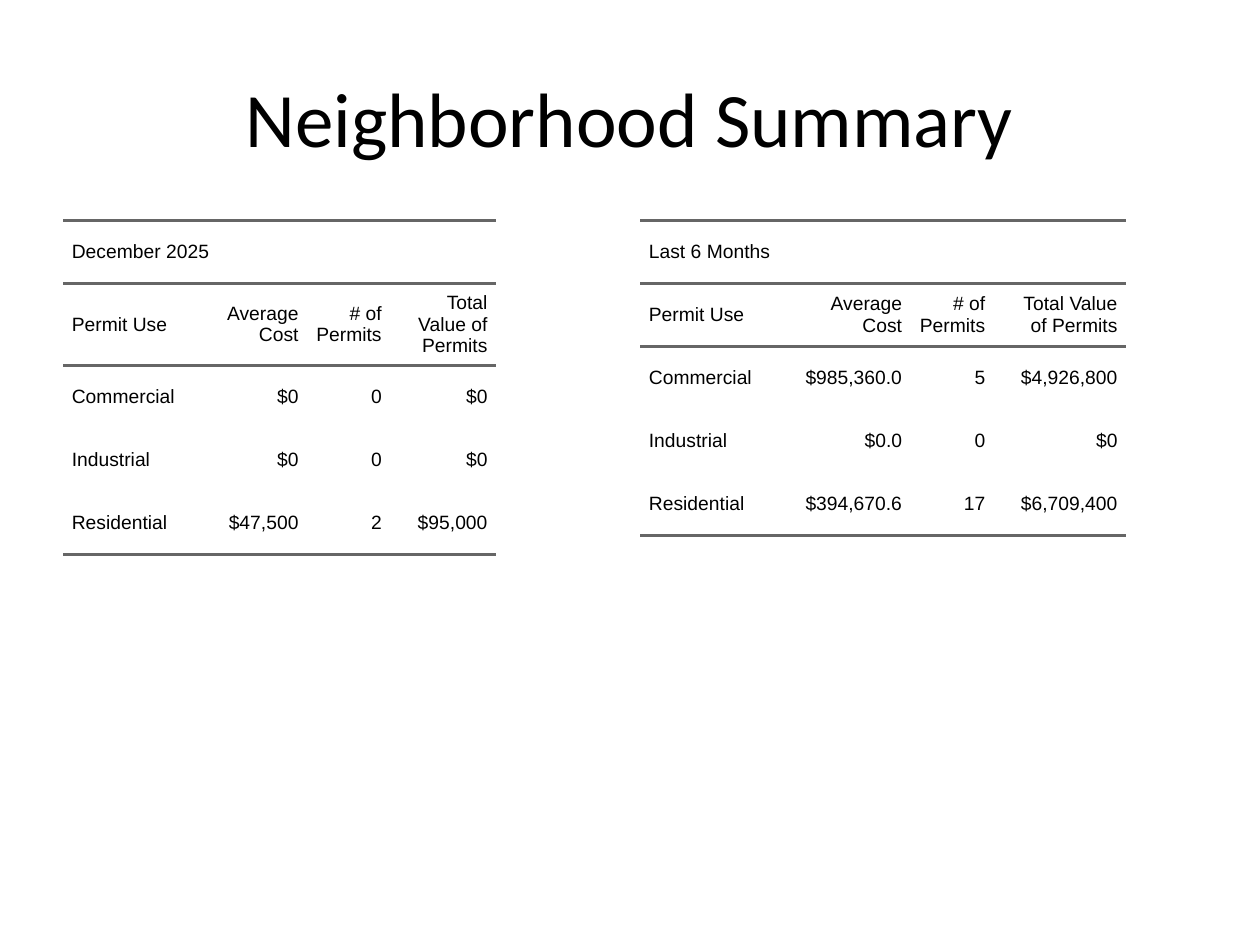
"""Build the neighborhood permit summary slide with two ruled tables."""

from dataclasses import dataclass

import lxml.etree
import pptx
import pptx.dml.color
import pptx.enum.text
import pptx.oxml.ns
import pptx.util

Inches = pptx.util.Inches
COLORS = {"text": "000000", "rule": "666666"}
HEADERS = ("Permit Use", "Average Cost", "# of Permits", "Total Value of Permits")
PERMIT_USES = ("Commercial", "Industrial", "Residential")
ROW_HEIGHT = 0.5
TABLE_TOP = 1.75
CELL_PADDING = 0.07
RULED_ROWS = {0: ("lnT", "lnB"), 1: ("lnT", "lnB"), 4: ("lnB",)}
PLAIN_TABLE_STYLE = "{2D5ABB26-0587-4C30-8999-92F81FD0307C}"


@dataclass(frozen=True)
class PermitTable:
    period: str
    left: float
    column_widths: tuple[float, ...]
    figures: tuple[tuple[str, str, str], ...]


TABLES = (
    PermitTable(
        "December 2025",
        0.5,
        (1.1, 0.84, 0.66, 0.84),
        (("$0", "0", "$0"), ("$0", "0", "$0"), ("$47,500", "2", "$95,000")),
    ),
    PermitTable(
        "Last 6 Months",
        5.08,
        (1.1, 1.05, 0.66, 1.05),
        (
            ("$985,360.0", "5", "$4,926,800"),
            ("$0.0", "0", "$0"),
            ("$394,670.6", "17", "$6,709,400"),
        ),
    ),
)


def set_font(paragraph, name: str, size: float) -> None:
    paragraph.font.name = name
    paragraph.font.size = pptx.util.Pt(size)
    paragraph.font.color.rgb = pptx.dml.color.RGBColor.from_string(COLORS["text"])


def add_rules(cell, edges: tuple[str, ...]) -> None:
    properties = cell._tc.get_or_add_tcPr()
    qualified = pptx.oxml.ns.qn
    for position, edge in enumerate(edges):
        line = lxml.etree.Element(qualified(f"a:{edge}"), w=str(pptx.util.Pt(1.5)))
        fill = lxml.etree.SubElement(line, qualified("a:solidFill"))
        lxml.etree.SubElement(fill, qualified("a:srgbClr"), val=COLORS["rule"])
        properties.insert(position, line)


def write_cell(cell, text: str, is_figure: bool) -> None:
    cell.vertical_anchor = pptx.enum.text.MSO_ANCHOR.MIDDLE
    cell.margin_left = cell.margin_right = 0
    cell.margin_top = cell.margin_bottom = Inches(CELL_PADDING)
    cell.text = text
    paragraph = cell.text_frame.paragraphs[0]
    alignment = pptx.enum.text.PP_ALIGN
    paragraph.alignment = alignment.RIGHT if is_figure else alignment.LEFT
    paragraph_properties = paragraph._p.get_or_add_pPr()
    for side in ("marL", "marR"):
        paragraph_properties.set(side, str(Inches(CELL_PADDING)))
    set_font(paragraph, "Arial", 11)


def add_permit_table(slide, permits: PermitTable) -> None:
    rows = [(permits.period, "", "", ""), HEADERS]
    rows += [(use, *values) for use, values in zip(PERMIT_USES, permits.figures)]
    frame = slide.shapes.add_table(
        len(rows),
        len(HEADERS),
        Inches(permits.left),
        Inches(TABLE_TOP),
        Inches(sum(permits.column_widths)),
        Inches(ROW_HEIGHT * len(rows)),
    )
    table = frame.table
    table.first_row = table.horz_banding = False
    style = table._tbl.tblPr.find(pptx.oxml.ns.qn("a:tableStyleId"))
    style.text = PLAIN_TABLE_STYLE
    for column, width in zip(table.columns, permits.column_widths):
        column.width = Inches(width)
    for row_index, values in enumerate(rows):
        for column_index, text in enumerate(values):
            cell = table.cell(row_index, column_index)
            cell.fill.background()
            add_rules(cell, RULED_ROWS.get(row_index, ()))
            if text:
                write_cell(cell, text, is_figure=column_index > 0)
    table.cell(0, 0).merge(table.cell(0, len(HEADERS) - 1))


def add_title(slide, text: str) -> None:
    title = slide.shapes.title
    title.left, title.top = Inches(0.5), Inches(0.3)
    title.width, title.height = Inches(9), Inches(1.25)
    title.text_frame.text = text
    title.text_frame.vertical_anchor = pptx.enum.text.MSO_ANCHOR.MIDDLE
    paragraph = title.text_frame.paragraphs[0]
    paragraph.alignment = pptx.enum.text.PP_ALIGN.CENTER
    set_font(paragraph, "Calibri", 44)


def main() -> None:
    presentation = pptx.Presentation()
    presentation.slide_width = Inches(10)
    presentation.slide_height = Inches(7.5)
    slide = presentation.slides.add_slide(presentation.slide_layouts[5])
    add_title(slide, "Neighborhood Summary")
    for permits in TABLES:
        add_permit_table(slide, permits)
    presentation.save("out.pptx")


if __name__ == "__main__":
    main()
